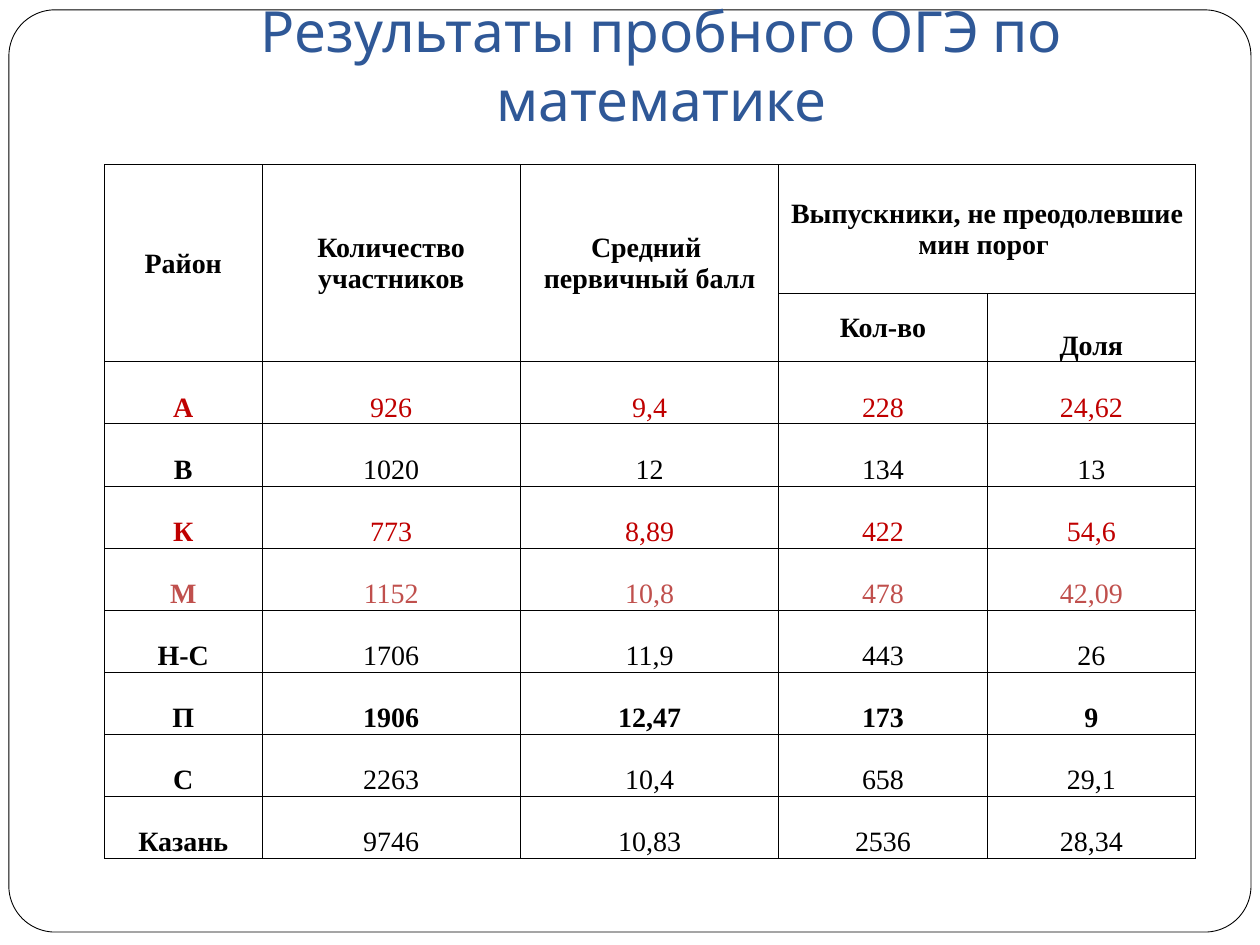
from lxml.etree import SubElement
from pptx import Presentation
from pptx.dml.color import RGBColor
from pptx.enum.shapes import MSO_SHAPE
from pptx.enum.text import MSO_ANCHOR, PP_ALIGN
from pptx.oxml.ns import qn
from pptx.util import Cm, Pt

COLORS = {
    "black": "000000",
    "white": "FFFFFF",
    "title": "2F5897",
    "red": "C00000",
    "soft_red": "C0504D",
}
COLUMN_WIDTHS = [3.17, 5.21, 5.21, 4.2, 4.2]
ROW_HEIGHTS = [2.6, 1.3] + [1.25] * 8
HEADERS = [
    (0, 0, 1, 0, "Район", MSO_ANCHOR.MIDDLE),
    (0, 1, 1, 1, "Количество участников", MSO_ANCHOR.MIDDLE),
    (0, 2, 1, 2, "Средний \nпервичный балл", MSO_ANCHOR.MIDDLE),
    (0, 3, 0, 4, "Выпускники, не преодолевшие мин порог ", MSO_ANCHOR.MIDDLE),
    (1, 3, 1, 3, "Кол-во", MSO_ANCHOR.MIDDLE),
    (1, 4, 1, 4, "Доля", MSO_ANCHOR.BOTTOM),
]
DISTRICTS = [
    ("А", "926", "9,4", "228", "24,62"),
    ("В", "1020", "12", "134", "13"),
    ("К", "773", "8,89", "422", "54,6"),
    ("М", "1152", "10,8", "478", "42,09"),
    ("Н-С", "1706", "11,9", "443", "26"),
    ("П", "1906", "12,47", "173", "9"),
    ("С", "2263", "10,4", "658", "29,1"),
    ("Казань", "9746", "10,83", "2536", "28,34"),
]
DISTRICT_COLORS = {"А": "red", "К": "red", "М": "soft_red"}
BOLD_DISTRICT = "П"


class SlideBuilder:
    title_font = "Karla"
    table_font = "Times New Roman"
    line_width = Pt(0.5)

    def __init__(self, presentation):
        self.slide = presentation.slides.add_slide(presentation.slide_layouts[6])

    def color(self, name):
        return RGBColor.from_string(COLORS[name])

    def set_text(self, text_frame, text, font_name, size, color, bold=False):
        text_frame.word_wrap = True
        text_frame.text = text
        for paragraph in text_frame.paragraphs:
            paragraph.alignment = PP_ALIGN.CENTER
            paragraph.font.name = font_name
            paragraph.font.size = Pt(size)
            paragraph.font.bold = bold
            paragraph.font.color.rgb = self.color(color)

    def frame(self, left, top, width, height):
        shape = self.slide.shapes.add_shape(
            MSO_SHAPE.ROUNDED_RECTANGLE, Cm(left), Cm(top), Cm(width), Cm(height)
        )
        shape.adjustments[0] = 0.05
        shape.shadow.inherit = False
        shape.fill.solid()
        shape.fill.fore_color.rgb = self.color("white")
        shape.line.color.rgb = self.color("black")
        shape.line.width = self.line_width

    def title(self, text, left, top, width, height):
        shape = self.slide.shapes.add_textbox(Cm(left), Cm(top), Cm(width), Cm(height))
        text_frame = shape.text_frame
        text_frame.vertical_anchor = MSO_ANCHOR.BOTTOM
        text_frame.margin_bottom = Cm(0.25)
        self.set_text(text_frame, text, self.title_font, 32.4, "title")

    def table(self, left, top, widths, heights):
        table = self.slide.shapes.add_table(
            len(heights), len(widths),
            Cm(left), Cm(top), Cm(sum(widths)), Cm(sum(heights)),
        ).table
        table.first_row = False
        table.horz_banding = False
        for column, width in zip(table.columns, widths):
            column.width = Cm(width)
        for row, height in zip(table.rows, heights):
            row.height = Cm(height)
        for cell in table.iter_cells():
            self.style_cell(cell)
        return table

    def style_cell(self, cell):
        cell.margin_left = cell.margin_right = cell.margin_top = Cm(0.02)
        cell.margin_bottom = 0
        properties = cell._tc.get_or_add_tcPr()
        for side in ("lnL", "lnR", "lnT", "lnB"):
            line = SubElement(properties, qn(f"a:{side}"), w=str(self.line_width))
            fill = SubElement(line, qn("a:solidFill"))
            SubElement(fill, qn("a:srgbClr"), val=COLORS["black"])
        cell.fill.background()

    def cell(self, cell, text, anchor=MSO_ANCHOR.BOTTOM, color="black", bold=True):
        cell.vertical_anchor = anchor
        self.set_text(cell.text_frame, text, self.table_font, 16, color, bold)


def main():
    presentation = Presentation()
    presentation.slide_width = Cm(25.4)
    presentation.slide_height = Cm(19.05)

    builder = SlideBuilder(presentation)
    builder.frame(0.18, 0.2, 25.04, 18.59)
    builder.title("Результаты пробного ОГЭ по математике", 2.54, 0.76, 21.59, 2.16)

    table = builder.table(2.11, 3.32, COLUMN_WIDTHS, ROW_HEIGHTS)
    for top, left, bottom, right, text, anchor in HEADERS:
        cell = table.cell(top, left)
        if (top, left) != (bottom, right):
            cell.merge(table.cell(bottom, right))
        builder.cell(cell, text, anchor)
    for row, values in enumerate(DISTRICTS, start=2):
        district = values[0]
        color = DISTRICT_COLORS.get(district, "black")
        for column, value in enumerate(values):
            bold = column == 0 or district == BOLD_DISTRICT
            builder.cell(table.cell(row, column), value, color=color, bold=bold)

    presentation.save("out.pptx")


if __name__ == "__main__":
    main()
